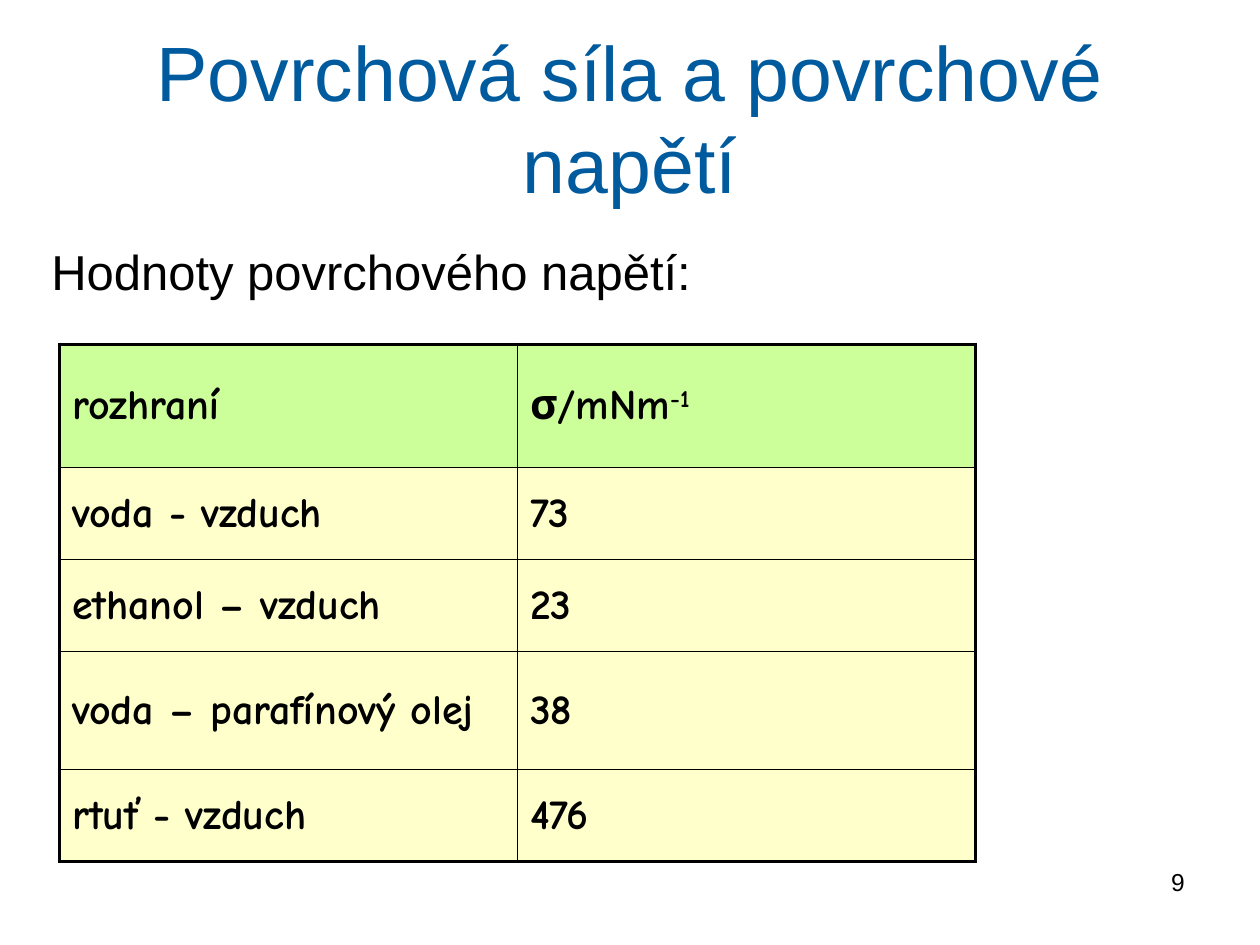
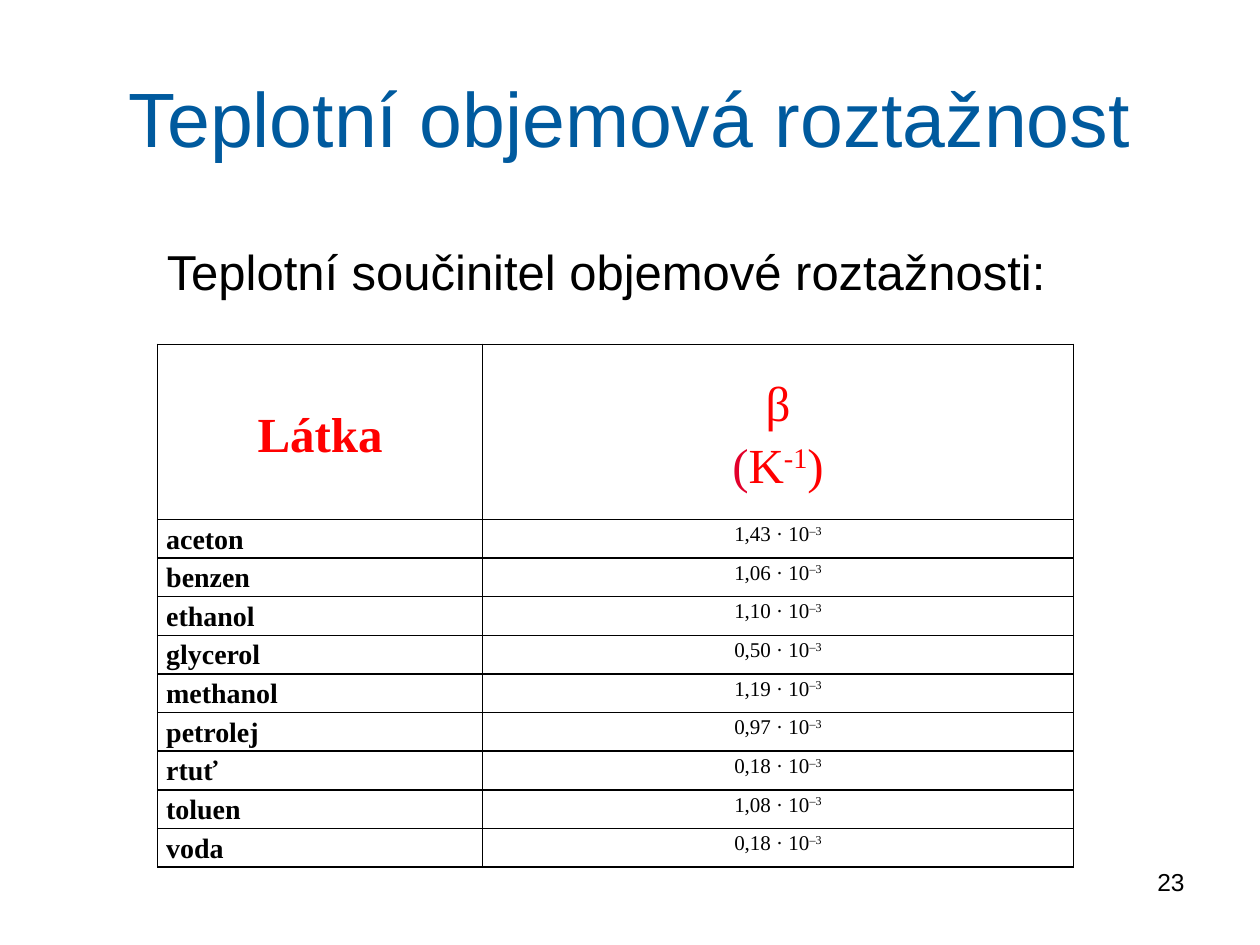
from dataclasses import dataclass

from lxml.etree import SubElement
from pptx import Presentation
from pptx.dml.color import RGBColor
from pptx.enum.text import MSO_ANCHOR, PP_ALIGN
from pptx.oxml.ns import qn
from pptx.util import Pt

BLUE = RGBColor(0x00, 0x5A, 0x9E)
BLACK = RGBColor(0x00, 0x00, 0x00)
RED = RGBColor(0xFF, 0x00, 0x00)
CRIMSON = RGBColor(0xE2, 0x00, 0x2B)
GREEN = RGBColor(0xCC, 0xFF, 0x99)
CREAM = RGBColor(0xFF, 0xFF, 0xCC)

SANS = "Arial"
HAND = "Comic Neue"
SERIF = "Times New Roman"

TITLE_BOX = (36, 21.6, 648, 90)
SUBTITLE_BOX = (22.3, 134.6, 648, 50)
NUMBER_BOX = (516, 491.8, 168, 37.4)
TABLE_TOP = 196.8
TABLE_WIDTH = 523.4
THIN, THICK = 1, 2.25

TENSIONS = [
    ("voda - vzduch", "73"),
    ("ethanol – vzduch", "23"),
    ("voda – parafínový olej", "38"),
    ("rtuť - vzduch", "476"),
]
EXPANSIONS = [
    ("aceton", "1,43"),
    ("benzen", "1,06"),
    ("ethanol", "1,10"),
    ("glycerol", "0,50"),
    ("methanol", "1,19"),
    ("petrolej", "0,97"),
    ("rtuť", "0,18"),
    ("toluen", "1,08"),
    ("voda", "0,18"),
]


@dataclass
class CellStyle:
    font: str
    size: float
    bold: bool = False
    color: RGBColor = BLACK
    fill: RGBColor = None
    alignment: PP_ALIGN = PP_ALIGN.LEFT
    anchor: MSO_ANCHOR = MSO_ANCHOR.MIDDLE
    margins: tuple = (7.2, 3.6)
    line_spacing: float = 1.0


def format_font(font, name, size, color, bold=False):
    font.name = name
    font.size = Pt(size)
    font.color.rgb = color
    font.bold = bold


def add_text(slide, box, text, size, color, alignment, anchor=MSO_ANCHOR.TOP):
    shape = slide.shapes.add_textbox(*map(Pt, box))
    text_frame = shape.text_frame
    text_frame.word_wrap = True
    text_frame.vertical_anchor = anchor
    text_frame.text = text
    paragraph = text_frame.paragraphs[0]
    paragraph.alignment = alignment
    format_font(paragraph.runs[0].font, SANS, size, color)


def add_frame(presentation, title, subtitle, subtitle_alignment, number):
    slide = presentation.slides.add_slide(presentation.slide_layouts[6])
    add_text(slide, TITLE_BOX, title, 44, BLUE, PP_ALIGN.CENTER, MSO_ANCHOR.MIDDLE)
    add_text(slide, SUBTITLE_BOX, subtitle, 28, BLACK, subtitle_alignment)
    add_text(slide, NUMBER_BOX, number, 14, BLACK, PP_ALIGN.RIGHT)
    return slide


def add_table(slide, left, column_widths, row_heights):
    row_count, column_count = len(row_heights), len(column_widths)
    frame = slide.shapes.add_table(
        row_count, column_count,
        Pt(left), Pt(TABLE_TOP), Pt(sum(column_widths)), Pt(sum(row_heights)))
    table = frame.table
    table.first_row = False
    table.horz_banding = False
    for column, width in zip(table.columns, column_widths):
        column.width = Pt(width)
    for row, height in zip(table.rows, row_heights):
        row.height = Pt(height)
    return table


def set_borders(table, outer_width):
    last_row, last_column = len(table.rows) - 1, len(table.columns) - 1
    for row in range(last_row + 1):
        for column in range(last_column + 1):
            properties = table.cell(row, column)._tc.get_or_add_tcPr()
            edges = {
                "a:lnL": column == 0,
                "a:lnR": column == last_column,
                "a:lnT": row == 0,
                "a:lnB": row == last_row,
            }
            for tag, is_outer in edges.items():
                width = outer_width if is_outer else THIN
                line = SubElement(properties, qn(tag), w=str(Pt(width)))
                fill = SubElement(line, qn("a:solidFill"))
                SubElement(fill, qn("a:srgbClr"), val=str(BLACK))


def fill_cell(cell, pieces, style):
    horizontal, vertical = map(Pt, style.margins)
    cell.margin_left = cell.margin_right = horizontal
    cell.margin_top = cell.margin_bottom = vertical
    cell.vertical_anchor = style.anchor
    if style.fill is None:
        cell.fill.background()
    else:
        cell.fill.solid()
        cell.fill.fore_color.rgb = style.fill
    paragraph = cell.text_frame.paragraphs[0]
    paragraph.alignment = style.alignment
    paragraph.line_spacing = style.line_spacing
    for piece in pieces:
        if piece == "\n":
            paragraph.add_line_break()
            continue
        run = paragraph.add_run()
        run.text = piece.removeprefix("^")
        format_font(run.font, style.font, style.size, style.color, style.bold)
        if piece.startswith("^"):
            run._r.get_or_add_rPr().set("baseline", "30000")
    return paragraph


def build_tension_slide(presentation):
    slide = add_frame(presentation, "Povrchová síla a povrchové napětí",
                      "Hodnoty povrchového napětí:", PP_ALIGN.LEFT, "9")
    table = add_table(slide, 34, [TABLE_WIDTH / 2] * 2, [70.4, 52.5, 52.5, 67.5, 52.5])
    set_borders(table, THICK)
    header = CellStyle(HAND, 24, bold=True, fill=GREEN)
    body = CellStyle(HAND, 24, bold=True, fill=CREAM)
    fill_cell(table.cell(0, 0), ["rozhraní"], header)
    fill_cell(table.cell(0, 1), ["σ/mNm", "^-1"], header)
    for row, values in enumerate(TENSIONS, start=1):
        for column, value in enumerate(values):
            fill_cell(table.cell(row, column), [value], body)


def build_expansion_slide(presentation):
    slide = add_frame(presentation, "Teplotní objemová roztažnost",
                      "Teplotní součinitel objemové roztažnosti:", PP_ALIGN.CENTER, "23")
    substance_width = 185.8
    table = add_table(slide, 90, [substance_width, TABLE_WIDTH - substance_width],
                      [100] + [20.5] * 7 + [21] * 2)
    set_borders(table, THIN)
    shared = {"font": SERIF, "margins": (5, 0), "line_spacing": 1.15}
    centered = {**shared, "alignment": PP_ALIGN.CENTER}
    substance_header = CellStyle(size=28, bold=True, color=RED, **centered)
    value_header = CellStyle(size=28, color=RED, **centered)
    substance_style = CellStyle(size=16, bold=True, anchor=MSO_ANCHOR.TOP, **shared)
    value_style = CellStyle(size=12, anchor=MSO_ANCHOR.TOP, **centered)
    fill_cell(table.cell(0, 0), ["Látka"], substance_header)
    unit = fill_cell(table.cell(0, 1), ["β", "\n", "(", "K", "^-1", ")"], value_header)
    unit.runs[1].font.color.rgb = CRIMSON
    for row, (substance, value) in enumerate(EXPANSIONS, start=1):
        fill_cell(table.cell(row, 0), [substance], substance_style)
        fill_cell(table.cell(row, 1), [f"{value} · 10", "^–3"], value_style)


def main():
    presentation = Presentation()
    presentation.slide_width = Pt(720)
    presentation.slide_height = Pt(540)
    build_tension_slide(presentation)
    build_expansion_slide(presentation)
    presentation.save("out.pptx")


if __name__ == "__main__":
    main()
